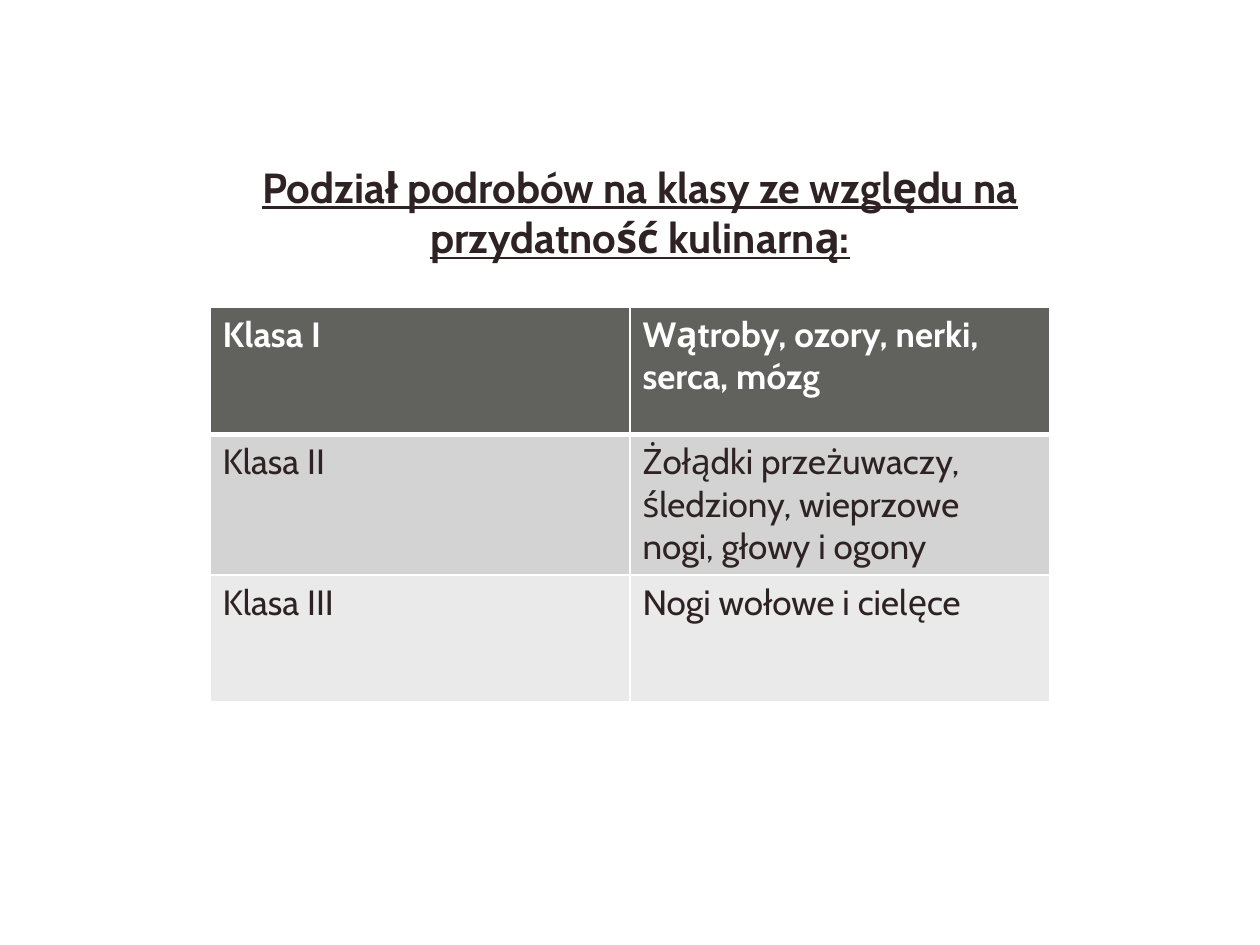
from dataclasses import dataclass

from lxml import etree
from pptx import Presentation
from pptx import util as u
from pptx.dml import color
from pptx.enum import text
from pptx.oxml import ns

COLORS = {
    "ink": "2E2224",
    "white": "FFFFFF",
    "header": "61625E",
    "band": "D2D3D2",
    "light": "EAEAEA",
}
FONT = "Cabin"
WIDTH, HEIGHT = u.Inches(10), u.Inches(7.5)
TITLE = "Podział podrobów na klasy ze względu na przydatność kulinarną:"
THIN, THICK = 1, 3


@dataclass
class ClassRow:
    name: str
    offal: str
    fill: str
    ink: str = "ink"
    bold: bool = False
    top: int = THIN
    bottom: int = THIN


ROWS = [
    ClassRow("Klasa I", "Wątroby, ozory, nerki, serca, mózg",
             "header", "white", True, bottom=THICK),
    ClassRow("Klasa II", "Żołądki przeżuwaczy, śledziony, wieprzowe nogi, głowy i ogony",
             "band", top=THICK),
    ClassRow("Klasa III", "Nogi wołowe i cielęce", "light"),
]


def rgb(name: str) -> color.RGBColor:
    return color.RGBColor.from_string(COLORS[name])


def write(frame, words: str, ink: str, **font_values) -> None:
    span = frame.paragraphs[0].add_run()
    span.text = words
    span.font.color.rgb = rgb(ink)
    for key, value in {"name": FONT, **font_values}.items():
        setattr(span.font, key, value)


def set_borders(cell, row: ClassRow) -> None:
    properties = cell._tc.get_or_add_tcPr()
    widths = {"lnL": THIN, "lnR": THIN, "lnT": row.top, "lnB": row.bottom}
    for position, (side, width) in enumerate(widths.items()):
        line = etree.Element(ns.qn(f"a:{side}"), w=str(u.Pt(width)))
        fill = etree.SubElement(line, ns.qn("a:solidFill"))
        etree.SubElement(fill, ns.qn("a:srgbClr"), val=COLORS["white"])
        properties.insert(position, line)


def add_title(page) -> None:
    box = page.shapes.title
    place = {"left": 0.146 * WIDTH, "top": 0.164 * HEIGHT,
             "width": 0.724 * WIDTH, "height": 0.161 * HEIGHT}
    for key, value in place.items():
        setattr(box, key, int(value))
    frame = box.text_frame
    layout = {"word_wrap": True, "auto_size": text.MSO_AUTO_SIZE.NONE,
              "vertical_anchor": text.MSO_ANCHOR.TOP}
    for key, value in layout.items():
        setattr(frame, key, value)
    frame.paragraphs[0].alignment = text.PP_ALIGN.CENTER
    write(frame, TITLE, "ink", size=u.Pt(24), bold=True, underline=True)


def add_class_table(page) -> None:
    row_height = u.Inches(1.01)
    table = page.shapes.add_table(
        len(ROWS), 2, WIDTH // 6, int(0.325 * HEIGHT),
        WIDTH * 2 // 3, row_height * len(ROWS)).table
    for line, row in zip(table.rows, ROWS):
        line.height = row_height
        for cell, words in zip(line.cells, (row.name, row.offal)):
            cell.fill.solid()
            cell.fill.fore_color.rgb = rgb(row.fill)
            set_borders(cell, row)
            write(cell.text_frame, words, row.ink, size=u.Pt(20), bold=row.bold)


def main() -> None:
    deck = Presentation()
    deck.slide_width, deck.slide_height = WIDTH, HEIGHT
    page = deck.slides.add_slide(deck.slide_layouts.get_by_name("Title Only"))
    add_title(page)
    add_class_table(page)
    deck.save("out.pptx")


if __name__ == "__main__":
    main()
